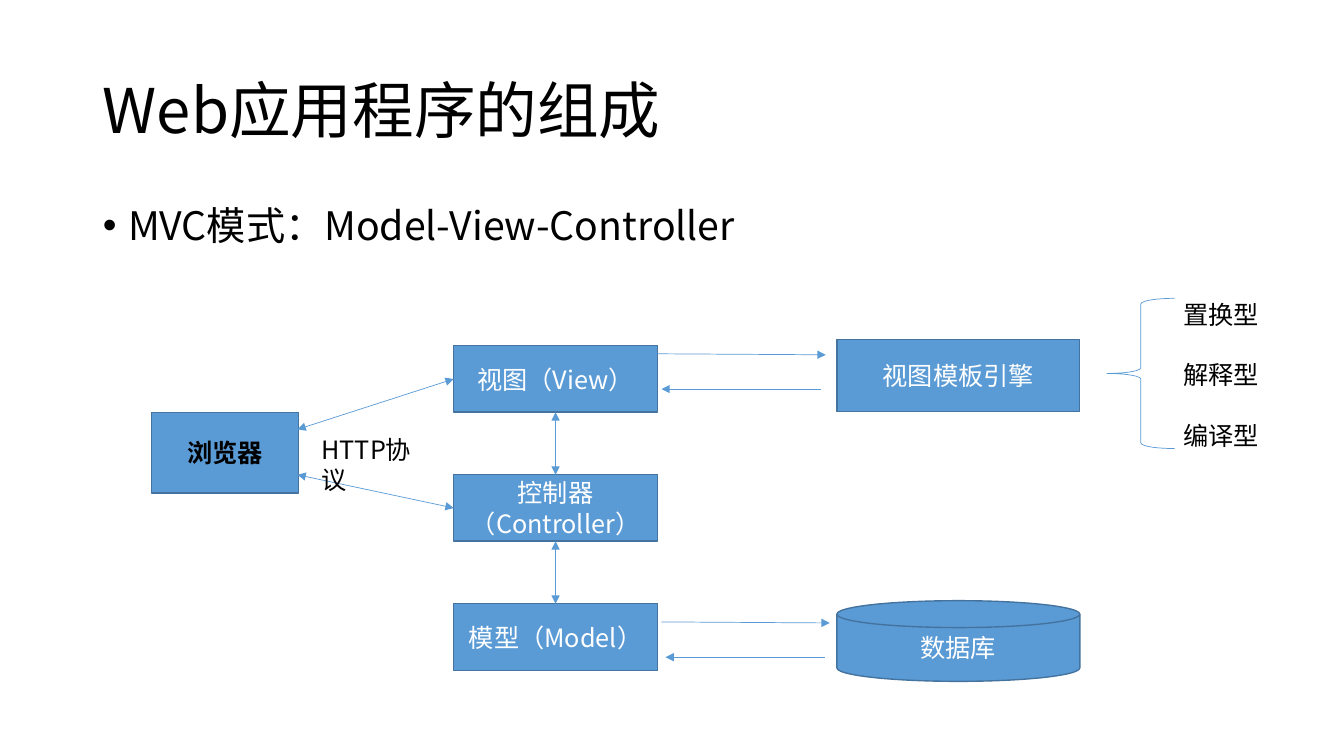
import dataclasses

import lxml.etree
import pptx
import pptx.dml.color
import pptx.enum.shapes
import pptx.enum.text
import pptx.oxml.ns
import pptx.util

PX = 9144  # one px is 1/100 inch
SHAPE = pptx.enum.shapes.MSO_SHAPE
ALIGN = pptx.enum.text.PP_ALIGN
ANCHOR = pptx.enum.text.MSO_ANCHOR
AUTOSIZE = pptx.enum.text.MSO_AUTO_SIZE
TOP, LEFT, BOTTOM = 0, 1, 2


@dataclasses.dataclass(frozen=True)
class Theme:
    font: str = "Noto Sans CJK SC"
    ink: str = "000000"
    paper: str = "FFFFFF"
    accent: str = "5B9BD5"
    border: str = "43739E"
    title: int = 44
    body: int = 28
    label: int = 18
    border_width: float = 1
    line_width: float = 0.5


THEME = Theme()


def px(*lengths):
    return [pptx.util.Emu(n * PX) for n in lengths]


def rgb(value):
    return pptx.dml.color.RGBColor.from_string(value)


def apply(obj, values):
    for name, value in values.items():
        setattr(obj, name, value)


def add_xml(parent, tag, **attrs):
    el = lxml.etree.SubElement(parent, pptx.oxml.ns.qn(tag))
    for name, value in attrs.items():
        el.set(name, value)
    return el


def write(p, text, size, color=THEME.ink, bold=False, **layout):
    """Put one styled run in a paragraph."""
    apply(p, layout)
    r = p.add_run()
    r.text = text
    apply(r.font, {"name": THEME.font, "size": pptx.util.Pt(size), "bold": bold})
    r.font.color.rgb = rgb(color)
    add_xml(r.font._element, "a:ea", typeface=THEME.font)


def set_line(sp, color, width):
    sp.line.color.rgb = rgb(color)
    sp.line.width = pptx.util.Pt(width)


def fill_placeholder(sp, box, text, size, anchor, **layout):
    apply(sp, dict(zip(("left", "top", "width", "height"), px(*box))))
    tf = sp.text_frame
    apply(tf, {"auto_size": AUTOSIZE.NONE, "vertical_anchor": anchor})
    p = tf.paragraphs[0]
    write(p, text, size, alignment=ALIGN.LEFT, line_spacing=0.9, **layout)
    return p


def set_bullet(p, indent):
    pPr = p._p.get_or_add_pPr()
    apply_indent = {"marL": indent * PX, "indent": -indent * PX}
    for name, value in apply_indent.items():
        pPr.set(name, str(value))
    add_xml(pPr, "a:buFont", typeface="Arial")
    add_xml(pPr, "a:buChar", char="•")


def add_node(slide, box, text, kind=SHAPE.RECTANGLE, color=THEME.paper, bold=False):
    sp = slide.shapes.add_shape(kind, *px(*box))
    sp.shadow.inherit = False
    sp.fill.solid()
    sp.fill.fore_color.rgb = rgb(THEME.accent)
    set_line(sp, THEME.border, THEME.border_width)
    tf = sp.text_frame
    apply(tf, {"word_wrap": True, "vertical_anchor": ANCHOR.MIDDLE})
    write(tf.paragraphs[0], text, THEME.label, color, bold, alignment=ALIGN.CENTER)
    return sp


def add_arrow(slide, start, end, begin=None, finish=None, both=False):
    """Arrow from start to end; begin and finish are (shape, site) joints."""
    straight = pptx.enum.shapes.MSO_CONNECTOR.STRAIGHT
    line = slide.shapes.add_connector(straight, *px(*start, *end))
    if begin:
        line.begin_connect(*begin)
    if finish:
        line.end_connect(*finish)
    set_line(line, THEME.accent, THEME.line_width)
    ln = line.line._get_or_add_ln()
    if both:
        add_xml(ln, "a:headEnd", type="triangle")
    add_xml(ln, "a:tailEnd", type="triangle")
    add_xml(line._element.spPr, "a:effectLst")


def add_brace(slide, box):
    sp = slide.shapes.add_shape(SHAPE.LEFT_BRACE, *px(*box))
    sp.shadow.inherit = False
    sp.fill.background()
    set_line(sp, THEME.accent, THEME.line_width)


def add_label(slide, box, lines, gap=0):
    tf = slide.shapes.add_textbox(*px(*box)).text_frame
    tf.word_wrap = True
    for i, text in enumerate(lines):
        p = tf.add_paragraph() if i else tf.paragraphs[0]
        write(p, text, THEME.label, space_before=pptx.util.Pt(gap if i else 0))


def main():
    prs = pptx.Presentation()
    prs.slide_width, prs.slide_height = px(1333, 750)
    slide = prs.slides.add_slide(prs.slide_layouts[1])

    # Title and bullet
    title, body = slide.placeholders
    fill_placeholder(title, (92, 40, 1150, 145), "Web应用程序的组成", THEME.title, ANCHOR.MIDDLE)
    p = fill_placeholder(body, (92, 200, 1017, 66), "MVC模式：Model-View-Controller",
                         THEME.body, ANCHOR.TOP, space_before=pptx.util.Pt(10))
    set_bullet(p, 25)

    # Browser, the MVC column and the two back ends
    add_node(slide, (150, 409, 146, 80), "浏览器", color=THEME.ink, bold=True)
    names = ("视图（View）", "控制器（Controller）", "模型（Model）")
    view, controller, model = [
        add_node(slide, (450, 343 + 128 * i, 202, 66), name) for i, name in enumerate(names)]
    add_node(slide, (830, 337, 241, 71), "视图模板引擎")
    add_node(slide, (830, 596, 241, 80), "数据库", SHAPE.FLOWCHART_MAGNETIC_DISK)

    # Request and reply arrows to the back ends
    for x, y in ((652, 351), (656, 617)):
        add_arrow(slide, (x, y), (x + 167, y + 1))
        add_arrow(slide, (x + 162, y + 35), (x + 4, y + 35))

    # Two-way arrows within the column and from the browser
    for upper, lower in ((view, controller), (controller, model)):
        add_arrow(slide, (0, 0), (0, 0), (upper, BOTTOM), (lower, TOP), both=True)
    for y, target in ((426, view), (471, controller)):
        add_arrow(slide, (295, y), (450, y), finish=(target, LEFT), both=True)

    # Protocol label and the kinds of template engine
    add_label(slide, (309, 426, 128, 40), ["HTTP协议"])
    add_brace(slide, (1098, 296, 67, 149))
    add_label(slide, (1164, 292, 96, 162), ["置换型", "解释型", "编译型"], gap=21.6)

    prs.save("out.pptx")


if __name__ == "__main__":
    main()
